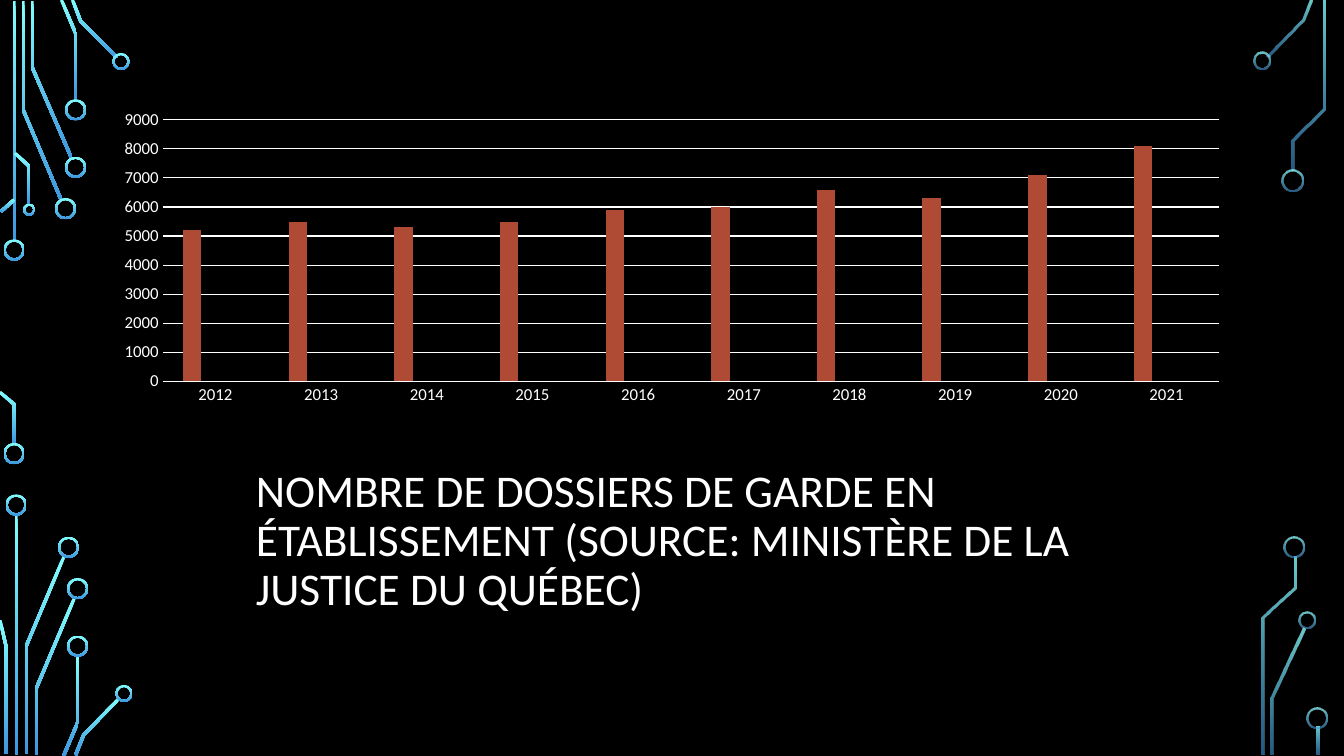
from dataclasses import dataclass
from math import hypot

from lxml import etree
from pptx import Presentation
from pptx.chart.data import CategoryChartData
from pptx.dml.color import RGBColor
from pptx.enum.chart import XL_CHART_TYPE, XL_TICK_MARK
from pptx.enum.shapes import MSO_SHAPE
from pptx.enum.text import MSO_ANCHOR
from pptx.oxml.ns import qn
from pptx.util import Inches, Pt

COLUMNS = XL_CHART_TYPE.COLUMN_CLUSTERED
NO_TICK = XL_TICK_MARK.NONE
DONUT = MSO_SHAPE.DONUT
MIDDLE = MSO_ANCHOR.MIDDLE


@dataclass(frozen=True)
class Theme:
    background = RGBColor(0x00, 0x00, 0x00)
    text = RGBColor(0xFF, 0xFF, 0xFF)
    glow = (RGBColor(0x82, 0xFF, 0xFF), RGBColor(0x3D, 0x97, 0xDE))
    series = (RGBColor(0xAF, 0x4A, 0x35), RGBColor(0xD3, 0x59, 0x40), RGBColor(0xE4, 0xAD, 0xA7))
    font = "Calibri"
    title_size = 32.4
    axis_size = 12
    chart_size = 10
    line_width = 0.75
    trace_width = 0.03
    ring_width = 0.02


THEME = Theme()

TITLE = "NOMBRE DE DOSSIERS DE GARDE EN ÉTABLISSEMENT (SOURCE: MINISTÈRE DE LA JUSTICE DU QUÉBEC)"
YEARS = [str(year) for year in range(2012, 2022)]
CASES = [5200, 5500, 5300, 5500, 5900, 6000, 6600, 6300, 7100, 8100]

LEFT_TRACES = [
    [(0.14, 0.01), (0.14, 2.4)],
    [(0.61, 1.99), (0.23, 1.09), (0.23, 0.01)],
    [(0.71, 1.57), (0.32, 0.67), (0.32, 0.01)],
    [(0.61, 0), (0.75, 0.33), (0.75, 1)],
    [(0.72, 0), (0.8, 0.21), (1.16, 0.57)],
    [(0.01, 2.1), (0.14, 1.98)],
    [(0, 3.89), (0.14, 4.01), (0.14, 4.41)],
    [(0.15, 1.52), (0.29, 1.65), (0.29, 2.03)],
    [(0.16, 5.1), (0.16, 7.49)],
    [(0.26, 7.48), (0.26, 6.41), (0.64, 5.51)],
    [(0, 6.15), (0.06, 6.41), (0.06, 7.48)],
    [(0.36, 7.49), (0.36, 6.83), (0.74, 5.93)],
    [(0.63, 7.5), (0.77, 7.17), (0.77, 6.5)],
    [(0.75, 7.49), (0.83, 7.29), (1.18, 6.93)],
]
LEFT_RINGS = [
    (0.14, 2.48, 0.21), (0.14, 4.5, 0.21), (0.65, 2.07, 0.21), (0.75, 1.66, 0.21),
    (0.75, 1.09, 0.21), (1.2, 0.61, 0.17), (0.29, 2.08, 0.12), (0.16, 5.01, 0.21),
    (0.68, 5.43, 0.21), (0.77, 5.84, 0.21), (0.77, 6.41, 0.21), (1.23, 6.88, 0.17),
]
RIGHT_TRACES = [
    [(0.17, 0.56), (0.52, 0.2), (0.6, 0)],
    [(0.22, 7.49), (0.22, 6.93), (0.53, 6.23)],
    [(0.73, 0.01), (0.73, 1.08), (0.42, 1.39), (0.42, 1.69)],
    [(0.13, 7.49), (0.13, 6.13), (0.44, 5.83), (0.44, 5.52)],
    [(0.67, 7.21), (0.67, 7.49)],
]
RIGHT_RINGS = [
    (0.12, 0.6, 0.17), (0.42, 1.79, 0.21), (0.56, 6.15, 0.17),
    (0.43, 5.43, 0.21), (0.66, 7.12, 0.21),
]


def paint_glow(shape, opacities):
    shape.shadow.inherit = False
    shape.line.fill.background()
    shape.fill.gradient()
    shape.fill.gradient_angle = 270
    for stop, color, position in zip(shape.fill.gradient_stops, THEME.glow, (0, 1)):
        stop.color.rgb = color
        stop.position = position
    for color, opacity in zip(shape._element.spPr.iter(qn("a:srgbClr")), opacities):
        if opacity < 100:
            etree.SubElement(color, qn("a:alpha")).set("val", str(opacity * 1000))


def ribbon_outline(points, width):
    normals = []
    for (x1, y1), (x2, y2) in zip(points, points[1:]):
        length = hypot(x2 - x1, y2 - y1)
        normals.append(((y1 - y2) / length, (x2 - x1) / length))
    near, far = [], []
    for (x, y), (ax, ay), (bx, by) in zip(points, normals[:1] + normals, normals + normals[-1:]):
        reach = width / 2 / (1 + ax * bx + ay * by)
        dx, dy = (ax + bx) * reach, (ay + by) * reach
        near.append((x + dx, y + dy))
        far.append((x - dx, y - dy))
    return near + far[::-1]


def add_circuit(slide, box, traces, rings, opacities=(100, 100)):
    left, top = box[:2]
    for trace in traces:
        outline = [
            (Inches(left + x), Inches(top + y))
            for x, y in ribbon_outline(trace, THEME.trace_width)
        ]
        builder = slide.shapes.build_freeform(*outline[0])
        builder.add_line_segments(outline[1:], close=True)
        paint_glow(builder.convert_to_shape(), opacities)
    for x, y, size in rings:
        ring = slide.shapes.add_shape(
            DONUT, Inches(left + x - size / 2), Inches(top + y - size / 2), Inches(size), Inches(size)
        )
        ring.adjustments[0] = THEME.ring_width / size
        paint_glow(ring, opacities)


def style_font(font, size):
    font.name = THEME.font
    font.size = Pt(size)
    font.color.rgb = THEME.text


def add_text(slide, box, text, size, anchor=MIDDLE, line_spacing=1.0):
    frame = slide.shapes.add_textbox(*map(Inches, box)).text_frame
    frame.word_wrap = True
    frame.vertical_anchor = anchor
    paragraph = frame.paragraphs[0]
    paragraph.line_spacing = line_spacing
    run = paragraph.add_run()
    run.text = text
    style_font(run.font, size)


def style_line(line):
    line.color.rgb = THEME.text
    line.width = Pt(THEME.line_width)


def add_cases_chart(slide, box):
    data = CategoryChartData()
    data.categories = YEARS
    data.add_series("Series 1", CASES)
    for name in ("Series 2", "Series 3"):
        data.add_series(name, [None] * len(YEARS))
    chart = slide.shapes.add_chart(COLUMNS, *map(Inches, box), data).chart
    chart.has_legend = False
    chart.has_title = False
    style_font(chart.font, THEME.chart_size)

    plot = chart.plots[0]
    plot.vary_by_categories = False
    plot.gap_width = 219
    plot.overlap = -27
    for series, color in zip(plot.series, THEME.series):
        series.format.fill.solid()
        series.format.fill.fore_color.rgb = color
        series.invert_if_negative = False

    years, counts = chart.category_axis, chart.value_axis
    for axis in (years, counts):
        axis.major_tick_mark = NO_TICK
        axis.minor_tick_mark = NO_TICK
        style_font(axis.tick_labels.font, THEME.axis_size)
    style_line(years.format.line)
    counts.format.line.fill.background()
    counts.minimum_scale = 0
    counts.maximum_scale = 9000
    counts.major_unit = 1000
    counts.has_major_gridlines = True
    style_line(counts.major_gridlines.format.line)


def main():
    deck = Presentation()
    deck.slide_width = Inches(13.33)
    deck.slide_height = Inches(7.5)
    slide = deck.slides.add_slide(deck.slide_layouts[6])
    slide.background.fill.solid()
    slide.background.fill.fore_color.rgb = THEME.background

    add_circuit(slide, (0, 0, 1.32, 7.5), LEFT_TRACES, LEFT_RINGS)
    add_circuit(slide, (12.4, 0, 0.77, 7.5), RIGHT_TRACES, RIGHT_RINGS, opacities=(80, 60))
    add_text(slide, (2.44, 4.73, 8.45, 1.3), TITLE, THEME.title_size, line_spacing=0.9)
    add_cases_chart(slide, (1.01, 1.03, 11.31, 3.05))
    deck.save("out.pptx")


if __name__ == "__main__":
    main()
